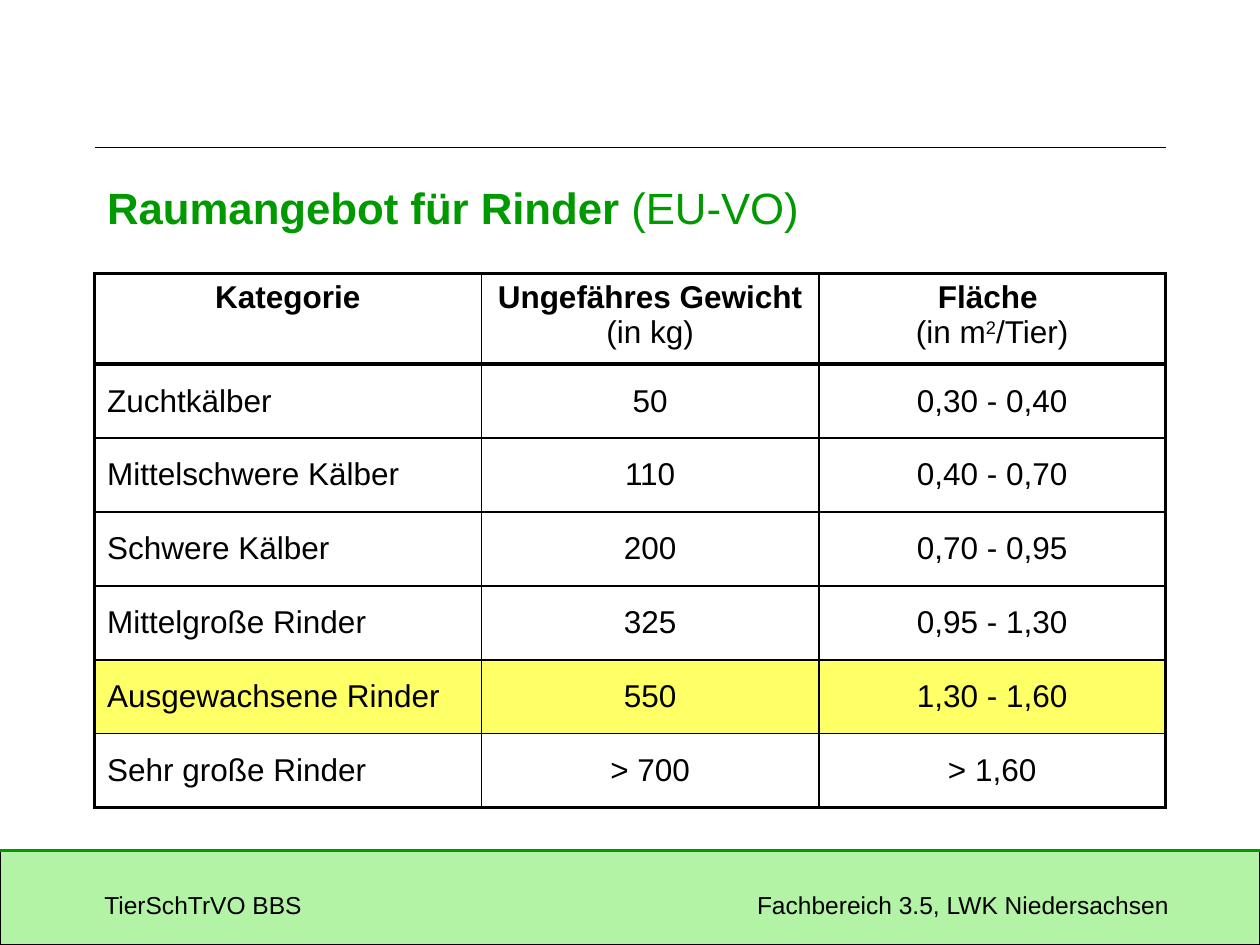
from lxml import etree
from pptx import Presentation
from pptx.dml.color import RGBColor
from pptx.enum import shapes, text
from pptx.oxml.ns import qn
from pptx.util import Inches, Pt

BLACK = RGBColor(0x00, 0x00, 0x00)
GREEN = RGBColor(0x00, 0x99, 0x00)
PALE_GREEN = RGBColor(0xB3, 0xF3, 0xA6)
YELLOW = RGBColor(0xFF, 0xFF, 0x66)

FONT = "Arial"
THIN, THICK = 1, 2.25
TITLE_ONLY = 5

# Each heading is a list of paragraphs, each paragraph a list of (text, bold, superscript).
HEADINGS = [
    [[("Kategorie", True, False)]],
    [[("Ungefähres Gewicht ", True, False)], [("(in kg)", False, False)]],
    [[("Fläche ", True, False)],
     [("(in m", False, False), ("2", False, True), ("/Tier)", False, False)]],
]
CATTLE = [
    ("Zuchtkälber", "50", "0,30 - 0,40"),
    ("Mittelschwere Kälber", "110", "0,40 - 0,70"),
    ("Schwere Kälber", "200", "0,70 - 0,95"),
    ("Mittelgroße Rinder", "325", "0,95 - 1,30"),
    ("Ausgewachsene Rinder", "550", "1,30 - 1,60"),
    ("Sehr große Rinder", "> 700", "> 1,60"),
]
HIGHLIGHTED = "Ausgewachsene Rinder"


def add_run(paragraph, words, size, color=BLACK, bold=False, superscript=False):
    run = paragraph.add_run()
    run.text = words
    run.font.name = FONT
    run.font.size = Pt(size)
    run.font.bold = bold
    run.font.color.rgb = color
    if superscript:
        run._r.get_or_add_rPr().set("baseline", "30000")


def add_rule(slide, left, top, width, color, weight):
    """Draw a horizontal line without a shadow."""
    rule = slide.shapes.add_connector(
        shapes.MSO_CONNECTOR.STRAIGHT,
        Inches(left), Inches(top), Inches(left + width), Inches(top))
    rule.line.color.rgb = color
    rule.line.width = Pt(weight)
    etree.SubElement(rule._element.spPr, qn("a:effectLst"))


def add_footer(slide, left, top, width, height):
    band = slide.shapes.add_shape(
        shapes.MSO_SHAPE.RECTANGLE,
        Inches(left), Inches(top), Inches(width), Inches(height))
    band.shadow.inherit = False
    band.fill.solid()
    band.fill.fore_color.rgb = PALE_GREEN
    band.line.color.rgb = BLACK
    band.line.width = Pt(0.75)
    add_rule(slide, left, top, width, GREEN, 2)

    credits = slide.shapes.add_textbox(
        Inches(left + 0.73), Inches(top + 0.23), Inches(width - 1.2), Inches(0.4))
    frame = credits.text_frame
    frame.word_wrap = True
    frame.vertical_anchor = text.MSO_ANCHOR.MIDDLE
    paragraph = frame.paragraphs[0]
    tabs = etree.SubElement(paragraph._p.get_or_add_pPr(), qn("a:tabLst"))
    etree.SubElement(tabs, qn("a:tab"), pos=str(Inches(width - 1.55)), algn="r")
    add_run(paragraph, "TierSchTrVO BBS\tFachbereich 3.5, LWK Niedersachsen", 14)


def place_title(slide, left, top, width, height):
    title = slide.shapes.title
    title.left, title.top = Inches(left), Inches(top)
    title.width, title.height = Inches(width), Inches(height)
    frame = title.text_frame
    frame.vertical_anchor = text.MSO_ANCHOR.MIDDLE
    paragraph = frame.paragraphs[0]
    paragraph.alignment = text.PP_ALIGN.LEFT
    add_run(paragraph, "Raumangebot für Rinder ", 25, GREEN, bold=True)
    add_run(paragraph, "(EU-VO)", 25, GREEN)


def set_borders(cell, left, right, top, bottom):
    """Give the four sides of a cell black lines of these point widths."""
    properties = cell._tc.get_or_add_tcPr()
    for side, weight in zip("LRTB", (left, right, top, bottom)):
        line = etree.SubElement(properties, qn(f"a:ln{side}"), w=str(Pt(weight)))
        fill = etree.SubElement(line, qn("a:solidFill"))
        etree.SubElement(fill, qn("a:srgbClr"), val=str(BLACK))


def fill_cell(cell, paragraphs, alignment, anchor):
    cell.vertical_anchor = anchor
    frame = cell.text_frame
    for index, runs in enumerate(paragraphs):
        paragraph = frame.add_paragraph() if index else frame.paragraphs[0]
        paragraph.alignment = alignment
        for words, bold, superscript in runs:
            add_run(paragraph, words, 18, bold=bold, superscript=superscript)


def add_space_table(slide, left, top, width, height):
    row_count, column_count = len(CATTLE) + 1, len(HEADINGS)
    table = slide.shapes.add_table(
        row_count, column_count,
        Inches(left), Inches(top), Inches(width), Inches(height)).table
    table.first_row = table.horz_banding = False

    column_widths = (3.07, 2.68, width - 3.07 - 2.68)
    for column, column_width in zip(table.columns, column_widths):
        column.width = Inches(column_width)
    heading_height = 0.72
    for index, row in enumerate(table.rows):
        row.height = Inches((height - heading_height) / len(CATTLE) if index
                            else heading_height)

    body = [[[[(words, False, False)]] for words in entry] for entry in CATTLE]
    for r, entry in enumerate([HEADINGS] + body):
        for c, paragraphs in enumerate(entry):
            cell = table.cell(r, c)
            set_borders(
                cell,
                left=THICK if c == 0 else THIN,
                right=THICK if c == column_count - 1 else THIN,
                top=THICK if r <= 1 else THIN,
                bottom=THICK if r in (0, row_count - 1) else THIN)
            if r and CATTLE[r - 1][0] == HIGHLIGHTED:
                cell.fill.solid()
                cell.fill.fore_color.rgb = YELLOW
            else:
                cell.fill.background()
            centred = r == 0 or c > 0
            fill_cell(
                cell, paragraphs,
                text.PP_ALIGN.CENTER if centred else text.PP_ALIGN.LEFT,
                text.MSO_ANCHOR.MIDDLE if r else text.MSO_ANCHOR.TOP)


def main():
    presentation = Presentation()
    presentation.slide_width, presentation.slide_height = Inches(10), Inches(7.5)
    slide = presentation.slides.add_slide(presentation.slide_layouts[TITLE_ONLY])
    add_footer(slide, 0, 6.75, 10, 0.75)
    add_rule(slide, 0.75, 1.17, 8.5, BLACK, 1)
    place_title(slide, 0.75, 1.35, 8.5, 0.58)
    add_space_table(slide, 0.75, 2.17, 8.5, 4.24)
    presentation.save("out.pptx")


if __name__ == "__main__":
    main()
